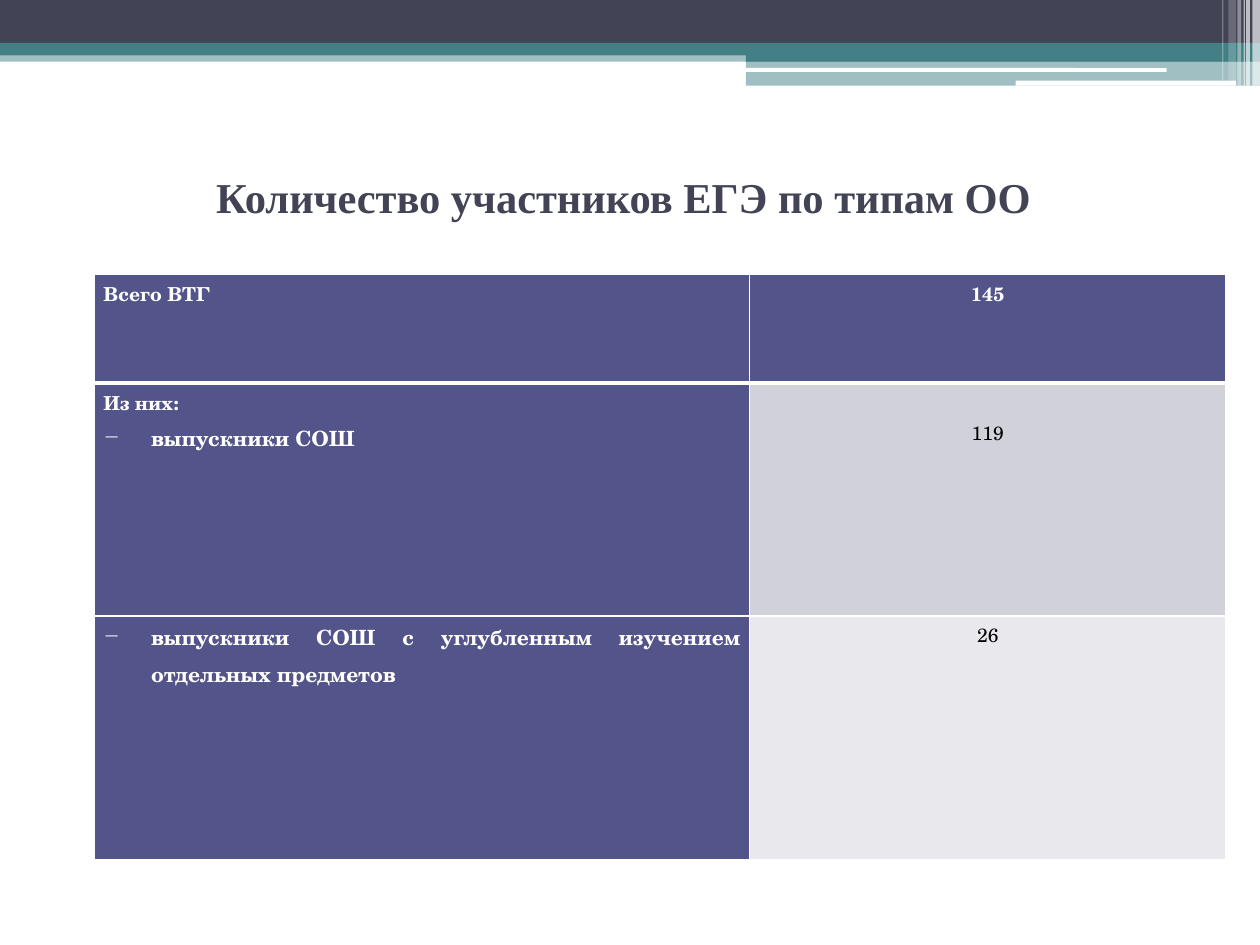
"""Build a slide with a banded header and a table of exam participants by school type."""
from lxml.etree import SubElement
from pptx import Presentation
from pptx.dml.color import RGBColor
from pptx.enum.shapes import MSO_SHAPE as Shape
from pptx.enum.text import MSO_ANCHOR as Anchor, PP_ALIGN as Align
from pptx.oxml.ns import qn
from pptx.util import Inches, Pt

WHITE = RGBColor(0xFF, 0xFF, 0xFF)
BLACK = RGBColor(0, 0, 0)
SLATE = RGBColor(0x42, 0x44, 0x56)
TEAL = RGBColor(0x43, 0x80, 0x86)
INDIGO = RGBColor(0x53, 0x54, 0x8A)
GREY = RGBColor(0xD1, 0xD1, 0xDA)
PALE = RGBColor(0xE9, 0xE9, 0xED)

TITLE = "Количество участников ЕГЭ по типам ОО"
TITLE_FONT, TABLE_FONT = "Times New Roman", "TeX Gyre Schola"
BULLET = "−"
ROWS = [
    (0.86, ["Всего ВТГ"], "145", INDIGO, 0),
    (1.85, ["Из них:", BULLET + "выпускники СОШ"], "119", GREY, 0.25),
    (1.93, [BULLET + "выпускники СОШ с углубленным изучением отдельных предметов"], "26", PALE, 0),
]
COLUMNS = [5.2, 3.78]

BANDS = [
    (Shape.RECTANGLE, 0, 0.4, 10, 0.09, TEAL, 50),
    (Shape.RECTANGLE, 0, 0, 10, 0.34, SLATE, 100),
    (Shape.RECTANGLE, 0, 0.34, 10, 0.1, TEAL, 100),
    (Shape.RECTANGLE, 5.92, 0.39, 4.08, 0.1, TEAL, 100),
    (Shape.RECTANGLE, 5.92, 0.48, 4.08, 0.2, TEAL, 50),
    (Shape.ROUNDED_RECTANGLE, 5.91, 0.54, 3.35, 0.03, WHITE, 100),
    (Shape.ROUNDED_RECTANGLE, 8.06, 0.64, 1.75, 0.04, WHITE, 100),
]
STRIPES = [
    (9.94, 0.06, 0.68, 65), (9.89, 0.03, 0.68, 65), (9.87, 0.01, 0.68, 60),
    (9.82, 0.03, 0.68, 40), (9.75, 0.06, 0.64, 20), (9.7, 0.01, 0.64, 30),
]


def add_band(slide, kind, left, top, width, height, color, opacity):
    band = slide.shapes.add_shape(kind, *map(Inches, (left, top, width, height)))
    band.shadow.inherit = False
    band.line.fill.background()
    band.fill.solid()
    band.fill.fore_color.rgb = color
    if opacity < 100:
        color_element = band.fill._xPr.find(qn("a:solidFill"))[0]
        SubElement(color_element, qn("a:alpha"), val=str(opacity * 1000))


def style_run(paragraph, font_name, size, color, bold):
    font = paragraph.runs[0].font
    font.name, font.size, font.bold = font_name, Pt(size), bold
    font.color.rgb = color


def add_title(slide):
    box = slide.shapes.add_textbox(*map(Inches, (0.5, 1.25, 9, 1.17)))
    frame = box.text_frame
    frame.word_wrap = True
    frame.vertical_anchor = Anchor.TOP
    frame.margin_top, frame.margin_right = Inches(0.11), Inches(0.2)
    frame.text = TITLE
    frame.paragraphs[0].alignment = Align.CENTER
    style_run(frame.paragraphs[0], TITLE_FONT, 24.3, SLATE, True)


def set_borders(cell, widths):
    properties = cell._tc.get_or_add_tcPr()
    for index, (side, width) in enumerate(widths.items()):
        line = properties.makeelement(qn("a:" + side), {"w": str(Pt(width))})
        fill = SubElement(line, qn("a:solidFill"))
        SubElement(fill, qn("a:srgbClr"), val=str(WHITE))
        properties.insert(index, line)


def fill_cell(cell, lines, alignment, fill, color, bold, top_margin=0):
    cell.fill.solid()
    cell.fill.fore_color.rgb = fill
    cell.margin_left = cell.margin_right = Inches(0.07)
    cell.margin_top, cell.margin_bottom = Inches(top_margin), 0
    cell.text_frame.text = "\n".join(line.lstrip(BULLET) for line in lines)
    for paragraph, line in zip(cell.text_frame.paragraphs, lines):
        bulleted = line.startswith(BULLET)
        paragraph.alignment = alignment
        paragraph.line_spacing = 1.15
        style_run(paragraph, TABLE_FONT, 12 if bulleted else 11, color, bold)
        if bulleted:
            properties = paragraph._p.get_or_add_pPr()
            properties.set("marL", str(Inches(0.38)))
            properties.set("indent", str(-Inches(0.38)))
            SubElement(properties, qn("a:buChar"), char=BULLET)


def add_participants_table(slide):
    heights = [row[0] for row in ROWS]
    area = (0.75, 2.18, sum(COLUMNS), sum(heights))
    table = slide.shapes.add_table(len(ROWS), len(COLUMNS), *map(Inches, area)).table
    for column, width in zip(table.columns, COLUMNS):
        column.width = Inches(width)
    for index, (height, labels, count, fill, top_margin) in enumerate(ROWS):
        header = index == 0
        table.rows[index].height = Inches(height)
        label_cell, count_cell = table.cell(index, 0), table.cell(index, 1)
        fill_cell(label_cell, labels, Align.JUSTIFY, INDIGO, WHITE, True)
        fill_cell(count_cell, [count], Align.CENTER, fill,
                  WHITE if header else BLACK, header, top_margin)
        widths = {"lnL": 1, "lnR": 1, "lnT": 3 if index == 1 else 1, "lnB": 3 if header else 1}
        for cell in (label_cell, count_cell):
            set_borders(cell, widths)


def main():
    presentation = Presentation()
    presentation.slide_width, presentation.slide_height = Inches(10), Inches(7.5)
    slide = presentation.slides.add_slide(presentation.slide_layouts[6])
    for band in BANDS:
        add_band(slide, *band)
    for left, width, height, opacity in STRIPES:
        add_band(slide, Shape.RECTANGLE, left, 0, width, height, WHITE, opacity)
    add_title(slide)
    add_participants_table(slide)
    presentation.save("out.pptx")


if __name__ == "__main__":
    main()
